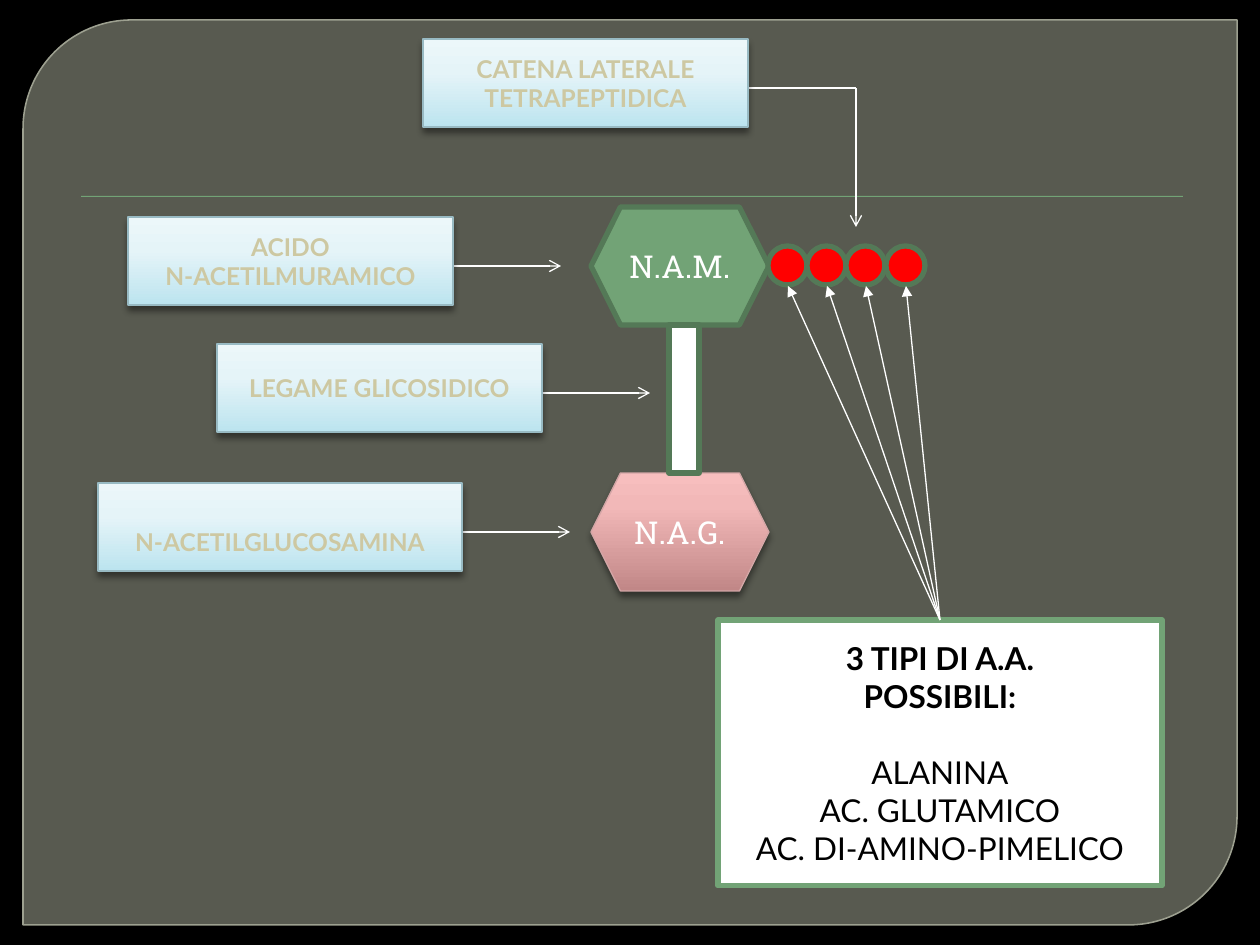
from lxml.etree import SubElement as Sub
from pptx import Presentation
from pptx.dml.color import RGBColor as Rgb
from pptx.enum.shapes import MSO_CONNECTOR as Conn, MSO_SHAPE as Form
from pptx.enum.text import MSO_ANCHOR as Anchor, PP_ALIGN as Align
from pptx.oxml.ns import qn
from pptx.util import Emu, Pt

INK = {
    "back": "000000", "panel": "888B7B", "rim": "9DA090", "green": "72A376",
    "moss": "547957", "white": "FFFFFF", "black": "000000", "red": "FF0000",
    "sand": "CDC8A2", "steel": "98BAC3", "rose": "D3A6A6",
}
ICE = ((0, "BCE4EF"), (62, "E5F4F8"), (100, "ECF7FA"))
PINK = ((0, "C18787"), (72, "F2B8B8"), (100, "F7BEBE"))
SOFT = (43, 4, 3)


def px(n):
    return Emu(round(n * 914400 / 126))


def rgb(name):
    return Rgb.from_string(INK[name])


class Board:
    """Holds the current slide and the style of its elements."""

    def __init__(self, deck):
        self.slide = deck.slides.add_slide(deck.slide_layouts[6])
        fill = self.slide.background.fill
        fill.solid()
        fill.fore_color.rgb = rgb("back")

    def shape(self, form, box, fill, line=None, width=3, shade=None):
        item = self.slide.shapes.add_shape(form, *map(px, box))
        item.shadow.inherit = False
        if isinstance(fill, str):
            item.fill.solid()
            item.fill.fore_color.rgb = rgb(fill)
        else:
            self.blend(item, fill)
        if line:
            item.line.color.rgb = rgb(line)
            item.line.width = Pt(width)
        else:
            item.line.fill.background()
        if shade:
            self.shade(item, *shade)
        return item

    def blend(self, item, stops):
        item.fill.gradient()
        item.fill.gradient_angle = 90
        group = next(item._element.spPr.iter(qn("a:gsLst")))
        for old in list(group):
            group.remove(old)
        for pos, tone in stops:
            stop = Sub(group, qn("a:gs"), pos=str(pos * 1000))
            Sub(stop, qn("a:srgbClr"), val=tone)

    def shade(self, item, alpha, blur, dist):
        effect = item._element.spPr.find(qn("a:effectLst"))
        cast = Sub(effect, qn("a:outerShdw"), blurRad=str(Pt(blur)),
                   dist=str(Pt(dist)), dir="5400000", rotWithShape="0")
        tone = Sub(cast, qn("a:srgbClr"), val=INK["black"])
        Sub(tone, qn("a:alpha"), val=str(alpha * 1000))

    def fade(self, item, alpha):
        tone = item._element.spPr.find(qn("a:solidFill"))[0]
        Sub(tone, qn("a:alpha"), val=str(alpha * 1000))

    def text(self, item, lines, size, face, tone, bold=0):
        frame = item.text_frame
        frame.word_wrap = True
        frame.vertical_anchor = Anchor.MIDDLE
        for i, line in enumerate(lines):
            para = frame.paragraphs[0] if i == 0 else frame.add_paragraph()
            para.text = line
            para.alignment = Align.CENTER
            font = para.font
            font.size, font.name, font.bold = Pt(size), face, i < bold
            font.color.rgb = rgb(tone)
        return frame

    def line(self, start, end, head=None):
        item = self.slide.shapes.add_connector(
            Conn.STRAIGHT, *map(px, (*start, *end)))
        item.line.color.rgb = rgb("white")
        item.line.width = Pt(0.75)
        if head:
            Sub(item.line._get_or_add_ln(), qn("a:tailEnd"), type=head)
        Sub(item._element.spPr, qn("a:effectLst"))

    def label(self, x, y, lines, wide=325, head="arrow"):
        right, mid = x + wide, y + 49
        end = (right + 108, mid)
        self.line((right - 20, mid), end, head)
        item = self.shape(Form.RECTANGLE, (x, y, wide, 88), ICE,
                          "steel", 0.75, SOFT)
        return self.text(item, lines, 14, "Lato", "sand", len(lines)), end

    def sugar(self, y, name, *look):
        item = self.shape(Form.HEXAGON, (591, y, 178, 118), *look)
        self.text(item, [name], 18, "Roboto Slab", "white")


def main():
    deck = Presentation()
    deck.slide_width, deck.slide_height = px(1260), px(945)
    board = Board(deck)

    panel = board.shape(Form.ROUND_2_DIAG_RECTANGLE, (23, 20, 1214, 905),
                        "panel", "rim", 0.87)
    panel.adjustments[0], panel.adjustments[1] = 0.12, 0
    board.fade(panel, 65)
    board.shape(Form.RECTANGLE, (81, 196, 1102, 1), "green", shade=(75, 1, 1))

    board.sugar(207, "N.A.M.", "green", "moss")
    board.label(128, 217, ["ACIDO", "N-ACETILMURAMICO"])
    board.sugar(473, "N.A.G.", PINK, "rose", 0.75, SOFT)
    low, _ = board.label(98, 483, ["N-ACETILGLUCOSAMINA"], 364)
    low.margin_top = px(36)
    board.shape(Form.RECTANGLE, (669, 325, 30, 148), "white", "moss")
    board.label(217, 344, ["LEGAME GLICOSIDICO"])

    beads = [768 + 118 * i // 3 for i in range(4)]
    for x in beads:
        board.shape(Form.OVAL, (x, 246, 39, 39), "red", "moss")

    _, turn = board.label(423, 39, ["CATENA LATERALE TETRAPEPTIDICA"],
                          head=None)
    board.line(turn, (turn[0], 227), "arrow")

    note = board.shape(Form.RECTANGLE, (718, 620, 444, 266), "white", "green")
    frame = board.text(note, [
        "3 TIPI DI A.A.", "POSSIBILI:", "ALANINA", "AC. GLUTAMICO",
        "AC. DI-AMINO-PIMELICO"], 18, "Lato", "black", 2)
    frame.paragraphs[2].space_before = Pt(22)
    for x in beads:
        board.line((940, 620), (x + 20, 286), "triangle")

    deck.save("out.pptx")


if __name__ == "__main__":
    main()
